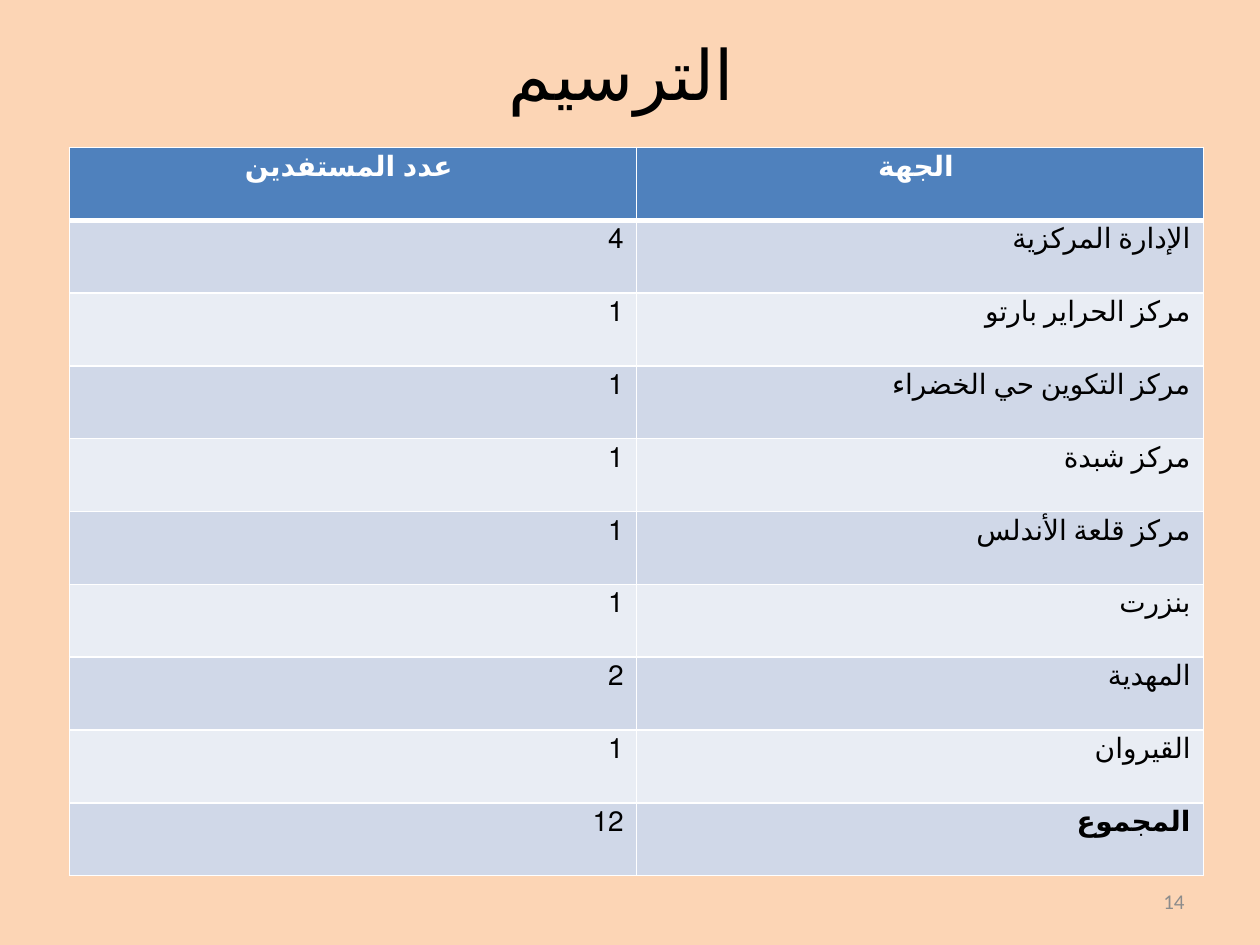
from dataclasses import dataclass
from typing import NamedTuple

from lxml.etree import fromstring
from pptx import Presentation
from pptx.dml.color import RGBColor
from pptx.enum.lang import MSO_LANGUAGE_ID
from pptx.enum.text import MSO_ANCHOR, MSO_AUTO_SIZE, PP_ALIGN
from pptx.oxml.ns import nsdecls
from pptx.util import Inches, Pt


@dataclass(frozen=True)
class Theme:
    """Colours, font and type sizes of the slide."""
    font: str = "Calibri"
    background: str = "FCD5B5"
    ink: str = "000000"
    white: str = "FFFFFF"
    muted: str = "8C8C8C"
    header: str = "4F81BD"
    bands: tuple[str, str] = ("D0D8E8", "E9EDF4")
    title_size: float = 39.6
    table_size: float = 16
    number_size: float = 12
    border: float = 1
    header_border: float = 3


class Entry(NamedTuple):
    """One table row: beneficiary count and place."""
    count: str
    place: str
    bold_place: bool = False


THEME = Theme()
HEADER = Entry("عدد المستفدين ", "الجهة ")
ENTRIES = [
    Entry("4", "الإدارة المركزية"),
    Entry("1", "مركز الحراير بارتو"),
    Entry("1", "مركز التكوين حي الخضراء"),
    Entry("1", "مركز شبدة"),
    Entry("1", "مركز قلعة الأندلس"),
    Entry("1", "بنزرت "),
    Entry("2", "المهدية"),
    Entry("1", "القيروان"),
    Entry("12", "المجموع", True),
]


def write(tf, text: str, size: float, color: str, align: PP_ALIGN,
          bold: bool = False, rtl: bool = False) -> None:
    """Write one formatted run into the first paragraph of a text frame."""
    p = tf.paragraphs[0]
    p.alignment = align
    if rtl:
        p._p.get_or_add_pPr().set("rtl", "1")
    r = p.add_run()
    r.text = text
    r.font.language_id = MSO_LANGUAGE_ID.ARABIC_TUNISIA
    r.font.name = THEME.font
    r.font.size = Pt(size)
    r.font.bold = bold
    r.font.color.rgb = RGBColor.from_string(color)


def style_cell(cell, fill: str, top: float, bottom: float) -> None:
    """Fill a cell and draw its four borders."""
    cell.fill.solid()
    cell.fill.fore_color.rgb = RGBColor.from_string(fill)
    tc_pr = cell._tc.get_or_add_tcPr()
    widths = {"lnL": THEME.border, "lnR": THEME.border, "lnT": top, "lnB": bottom}
    for i, (tag, width) in enumerate(widths.items()):
        tc_pr.insert(i, fromstring(
            f'<a:{tag} {nsdecls("a")} w="{Pt(width)}"><a:solidFill>'
            f'<a:srgbClr val="{THEME.white}"/></a:solidFill></a:{tag}>'))


def add_title(s, text: str) -> None:
    """Place and write the slide title."""
    sp = s.shapes.title
    sp.left, sp.top, sp.width, sp.height = map(Inches, (0.5, 0.3, 9, 0.56))
    tf = sp.text_frame
    tf.auto_size = MSO_AUTO_SIZE.NONE
    tf.vertical_anchor = MSO_ANCHOR.MIDDLE
    write(tf, text, THEME.title_size, THEME.ink, PP_ALIGN.CENTER)


def add_entries(s, header: Entry, entries: list[Entry]) -> None:
    """Draw the banded table with its header row."""
    rows = [header, *entries]
    tbl = s.shapes.add_table(len(rows), 2, Inches(0.55), Inches(1.17),
                             Inches(9), Inches(5.78)).table
    for i, entry in enumerate(rows):
        is_header = i == 0
        fill = THEME.header if is_header else THEME.bands[(i - 1) % 2]
        top = THEME.header_border if i == 1 else THEME.border
        bottom = THEME.header_border if is_header else THEME.border
        for j, text in enumerate((entry.count, entry.place)):
            cell = tbl.cell(i, j)
            style_cell(cell, fill, top, bottom)
            write(cell.text_frame, text, THEME.table_size,
                  THEME.white if is_header else THEME.ink,
                  PP_ALIGN.CENTER if is_header else PP_ALIGN.RIGHT,
                  bold=is_header or (j == 1 and entry.bold_place),
                  rtl=not is_header)


def add_page_number(s, text: str) -> None:
    """Write the page number at the lower right."""
    tf = s.shapes.add_textbox(*map(Inches, (7.17, 6.95, 2.33, 0.4))).text_frame
    tf.word_wrap = True
    tf.vertical_anchor = MSO_ANCHOR.MIDDLE
    write(tf, text, THEME.number_size, THEME.muted, PP_ALIGN.RIGHT)


def main() -> None:
    """Build and save the slide."""
    prs = Presentation()
    prs.slide_width, prs.slide_height = Inches(10), Inches(7.5)
    s = prs.slides.add_slide(prs.slide_layouts[5])
    s.background.fill.solid()
    s.background.fill.fore_color.rgb = RGBColor.from_string(THEME.background)
    add_title(s, "الترسيم ")
    add_entries(s, HEADER, ENTRIES)
    add_page_number(s, "14")
    prs.save("out.pptx")


if __name__ == "__main__":
    main()
